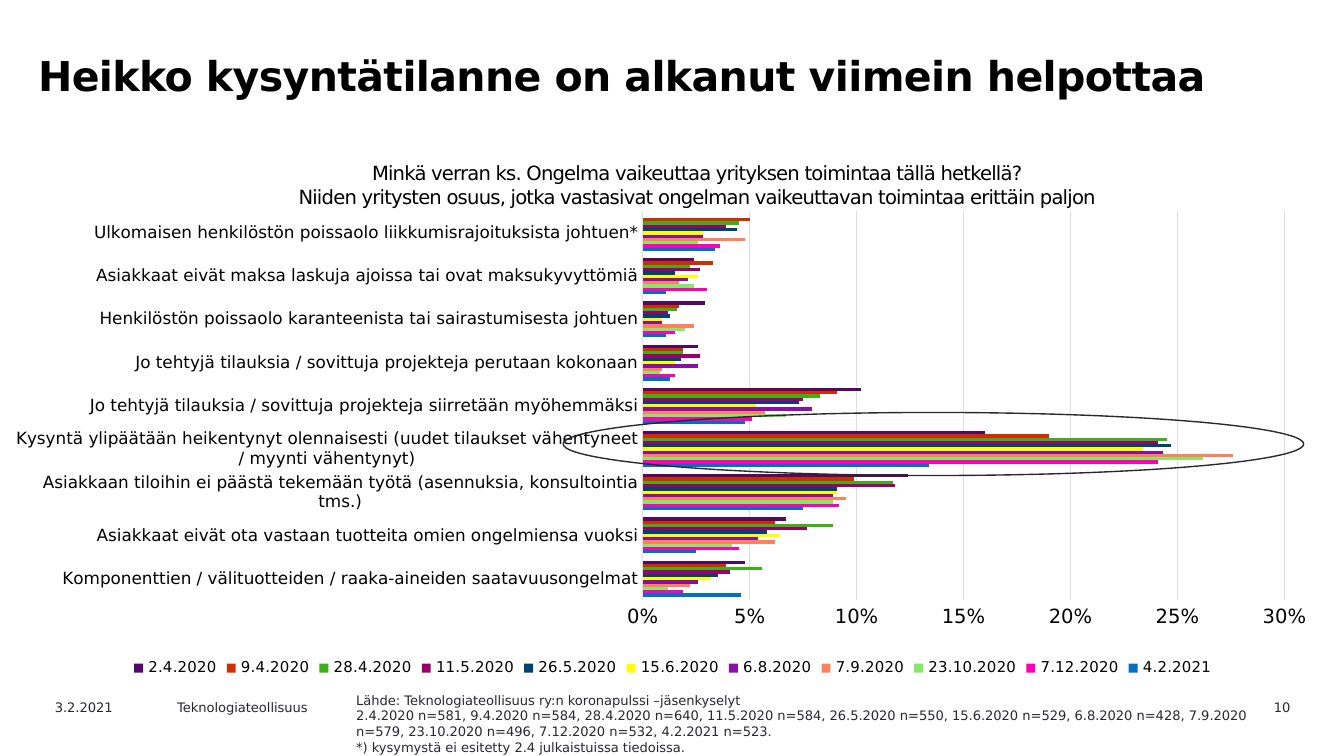
from dataclasses import dataclass

from lxml import etree
from pptx import Presentation
from pptx.chart.data import CategoryChartData
from pptx.dml.color import RGBColor
from pptx.enum.chart import XL_CHART_TYPE, XL_LEGEND_POSITION, XL_TICK_MARK
from pptx.enum.shapes import MSO_SHAPE
from pptx.enum.text import MSO_ANCHOR, MSO_AUTO_SIZE, PP_ALIGN
from pptx.oxml.ns import qn
from pptx.util import Pt

FONT = "DejaVu Sans"
BLACK, INK, GRID = "000000", "29282E", "DEDDE1"
BAR_CLUSTERED = XL_CHART_TYPE.BAR_CLUSTERED
LEGEND_BOTTOM = XL_LEGEND_POSITION.BOTTOM
NO_TICKS = XL_TICK_MARK.NONE
ELLIPSE = MSO_SHAPE.OVAL
LEFT, CENTER, RIGHT = PP_ALIGN.LEFT, PP_ALIGN.CENTER, PP_ALIGN.RIGHT
TOP, MIDDLE = MSO_ANCHOR.TOP, MSO_ANCHOR.MIDDLE
NO_AUTOFIT = MSO_AUTO_SIZE.NONE


@dataclass
class Frame:
    """Position and size in points."""
    left: float
    top: float
    width: float
    height: float

    def lengths(self):
        return Pt(self.left), Pt(self.top), Pt(self.width), Pt(self.height)


@dataclass
class TextStyle:
    size: float
    color: str = INK
    bold: bool = False
    spacing: float = 0
    align: PP_ALIGN = LEFT
    anchor: MSO_ANCHOR = TOP
    margins: tuple = (7.2, 3.6)
    line_height: float = 0


@dataclass
class Survey:
    date: str
    color: str
    shares: tuple


@dataclass
class FooterItem:
    text: str
    frame: Frame
    align: PP_ALIGN = LEFT


PROBLEMS = (
    "Komponenttien / välituotteiden / raaka-aineiden saatavuusongelmat",
    "Asiakkaat eivät ota vastaan tuotteita omien ongelmiensa vuoksi",
    "Asiakkaan tiloihin ei päästä tekemään työtä (asennuksia, konsultointia tms.)",
    "Kysyntä ylipäätään heikentynyt olennaisesti (uudet tilaukset vähentyneet / myynti vähentynyt)",
    "Jo tehtyjä tilauksia / sovittuja projekteja siirretään myöhemmäksi",
    "Jo tehtyjä tilauksia / sovittuja projekteja perutaan kokonaan",
    "Henkilöstön poissaolo karanteenista tai sairastumisesta johtuen",
    "Asiakkaat eivät maksa laskuja ajoissa tai ovat maksukyvyttömiä",
    "Ulkomaisen henkilöstön poissaolo liikkumisrajoituksista johtuen*",
)
SURVEYS = (
    Survey("4.2.2021", "0070C0", (0.046, 0.025, 0.075, 0.134, 0.048, 0.013, 0.011, 0.011, 0.034)),
    Survey("7.12.2020", "FF00B8", (0.019, 0.045, 0.092, 0.241, 0.051, 0.015, 0.015, 0.03, 0.036)),
    Survey("23.10.2020", "85E869", (0.012, 0.042, 0.089, 0.262, 0.067, 0.008, 0.02, 0.024, 0.026)),
    Survey("7.9.2020", "FF805C", (0.022, 0.062, 0.095, 0.276, 0.057, 0.009, 0.024, 0.017, 0.048)),
    Survey("6.8.2020", "8A0FA6", (0.026, 0.054, 0.089, 0.243, 0.079, 0.026, 0.009, 0.021, 0.028)),
    Survey("15.6.2020", "FFFF00", (0.032, 0.064, 0.091, 0.234, 0.053, 0.015, 0.009, 0.026, 0.028)),
    Survey("26.5.2020", "004373", (0.035, 0.058, 0.091, 0.247, 0.073, 0.018, 0.013, 0.015, 0.044)),
    Survey("11.5.2020", "99006E", (0.041, 0.077, 0.118, 0.241, 0.075, 0.027, 0.012, 0.027, 0.039)),
    Survey("28.4.2020", "3CAF1B", (0.056, 0.089, 0.117, 0.245, 0.083, 0.019, 0.016, 0.022, 0.045)),
    Survey("9.4.2020", "D02E00", (0.039, 0.062, 0.099, 0.19, 0.091, 0.019, 0.017, 0.033, 0.05)),
    Survey("2.4.2020", "530964", (0.048, 0.067, 0.124, 0.16, 0.102, 0.026, 0.029, 0.024, None)),
)
FOOTER = (
    FooterItem("10", Frame(630.7, 372.2, 67.7, 13), RIGHT),
    FooterItem("3.2.2021", Frame(22.3, 372.2, 72, 13)),
    FooterItem("Teknologiateollisuus", Frame(87.8, 372.2, 102.2, 13)),
)
QUESTION = (
    "Minkä verran ks. Ongelma vaikeuttaa yrityksen toimintaa tällä hetkellä?",
    "Niiden yritysten osuus, jotka vastasivat ongelman vaikeuttavan toimintaa erittäin paljon",
)
SOURCES = (
    "Lähde: Teknologiateollisuus ry:n koronapulssi –jäsenkyselyt",
    "2.4.2020 n=581, 9.4.2020 n=584, 28.4.2020 n=640, 11.5.2020 n=584, 26.5.2020 n=550, "
    "15.6.2020 n=529, 6.8.2020 n=428, 7.9.2020 n=579, 23.10.2020 n=496, 7.12.2020 n=532, "
    "4.2.2021 n=523.",
    "*) kysymystä ei esitetty 2.4 julkaistuissa tiedoissa.",
)


def rgb(color: str) -> RGBColor:
    return RGBColor.from_string(color)


def set_font(font, size: float, color: str, bold: bool = False) -> None:
    font.name, font.size, font.bold = FONT, Pt(size), bold
    font.color.rgb = rgb(color)


def write(box, frame: Frame, lines: tuple, style: TextStyle) -> None:
    """Place a text box or placeholder and fill it, one paragraph a line."""
    box.left, box.top, box.width, box.height = frame.lengths()
    text = box.text_frame
    text.word_wrap, text.auto_size = True, NO_AUTOFIT
    text.vertical_anchor = style.anchor
    text.margin_left = text.margin_right = Pt(style.margins[0])
    text.margin_top = text.margin_bottom = Pt(style.margins[1])
    for index, line in enumerate(lines):
        para = text.add_paragraph() if index else text.paragraphs[0]
        properties = para._p.get_or_add_pPr()
        properties.set("marL", "0")
        properties.set("indent", "0")
        etree.SubElement(properties, qn("a:buNone"))
        para.alignment = style.align
        para.space_before = Pt(0)
        if style.line_height:
            para.line_spacing = Pt(style.line_height)
        span = para.add_run()
        span.text = line
        set_font(span.font, style.size, style.color, style.bold)
        if style.spacing:
            span._r.get_or_add_rPr().set("spc", str(round(style.spacing * 100)))


def fix_plot_area(chart, x: float, y: float, width: float, height: float) -> None:
    """Set the inner plot area as fractions of the chart."""
    area = chart._chartSpace.chart.plotArea
    for old in area.findall(qn("c:layout")):
        area.remove(old)
    layout = etree.Element(qn("c:layout"))
    manual = etree.SubElement(layout, qn("c:manualLayout"))
    settings = {"layoutTarget": "inner", "xMode": "edge", "yMode": "edge",
                "x": x, "y": y, "w": width, "h": height}
    for name, value in settings.items():
        etree.SubElement(manual, qn(f"c:{name}")).set("val", str(value))
    area.insert(0, layout)


def draw_survey_chart(page, frame: Frame) -> None:
    data = CategoryChartData(number_format="0.0%")
    data.categories = PROBLEMS
    for survey in SURVEYS:
        data.add_series(survey.date, survey.shares)
    chart = page.shapes.add_chart(BAR_CLUSTERED, *frame.lengths(), data).chart
    set_font(chart.font, 10, INK)
    chart.has_title = False
    chart.has_legend = True
    chart.legend.position = LEGEND_BOTTOM
    chart.legend.include_in_layout = False
    set_font(chart.legend.font, 8, BLACK)

    plot = chart.plots[0]
    plot.gap_width, plot.overlap, plot.vary_by_categories = 219, 0, False
    for series, survey in zip(plot.series, SURVEYS):
        series.format.fill.solid()
        series.format.fill.fore_color.rgb = rgb(survey.color)
        series.invert_if_negative = False

    problems, shares = chart.category_axis, chart.value_axis
    for axis, size in ((problems, 9), (shares, 10.5)):
        axis.major_tick_mark = axis.minor_tick_mark = NO_TICKS
        set_font(axis.tick_labels.font, size, BLACK)
    shares.minimum_scale, shares.maximum_scale, shares.major_unit = 0, 0.3, 0.05
    shares.tick_labels.number_format = "0%"
    shares.tick_labels.number_format_is_linked = False
    shares.format.line.fill.background()
    shares.has_major_gridlines = True
    for line in (problems.format.line, shares.major_gridlines.format.line):
        line.color.rgb, line.width = rgb(GRID), Pt(0.75)
    fix_plot_area(chart, 0.477, 0.042, 0.49, 0.791)


def draw_highlight(page, frame: Frame) -> None:
    ring = page.shapes.add_shape(ELLIPSE, *frame.lengths())
    ring.shadow.inherit = False
    ring.fill.background()
    ring.line.color.rgb, ring.line.width = rgb(INK), Pt(0.75)


def main() -> None:
    deck = Presentation()
    deck.slide_width, deck.slide_height = Pt(720), Pt(405)
    page = deck.slides.add_slide(deck.slide_layouts[1])
    write(page.shapes.title, Frame(14.4, 22.3, 640.8, 51.1),
          ("Heikko kysyntätilanne on alkanut viimein helpottaa",),
          TextStyle(22, BLACK, bold=True, spacing=-0.3, margins=(6, 4), line_height=27))
    write(page.placeholders[1], Frame(183.6, 367.2, 493.9, 38), SOURCES, TextStyle(7))
    for item in FOOTER:
        box = page.shapes.add_textbox(*item.frame.lengths())
        write(box, item.frame, (item.text,),
              TextStyle(7, align=item.align, anchor=MIDDLE, margins=(7.2, 0)))
    draw_survey_chart(page, Frame(8.6, 102.2, 702.7, 263.5))
    question_frame = Frame(141.1, 83.5, 465.1, 31)
    write(page.shapes.add_textbox(*question_frame.lengths()), question_frame, QUESTION,
          TextStyle(10.5, BLACK, spacing=-0.4, align=CENTER, margins=(2.9, 2.9)))
    draw_highlight(page, Frame(301.7, 221, 396.7, 33.8))
    deck.save("out.pptx")


if __name__ == "__main__":
    main()
